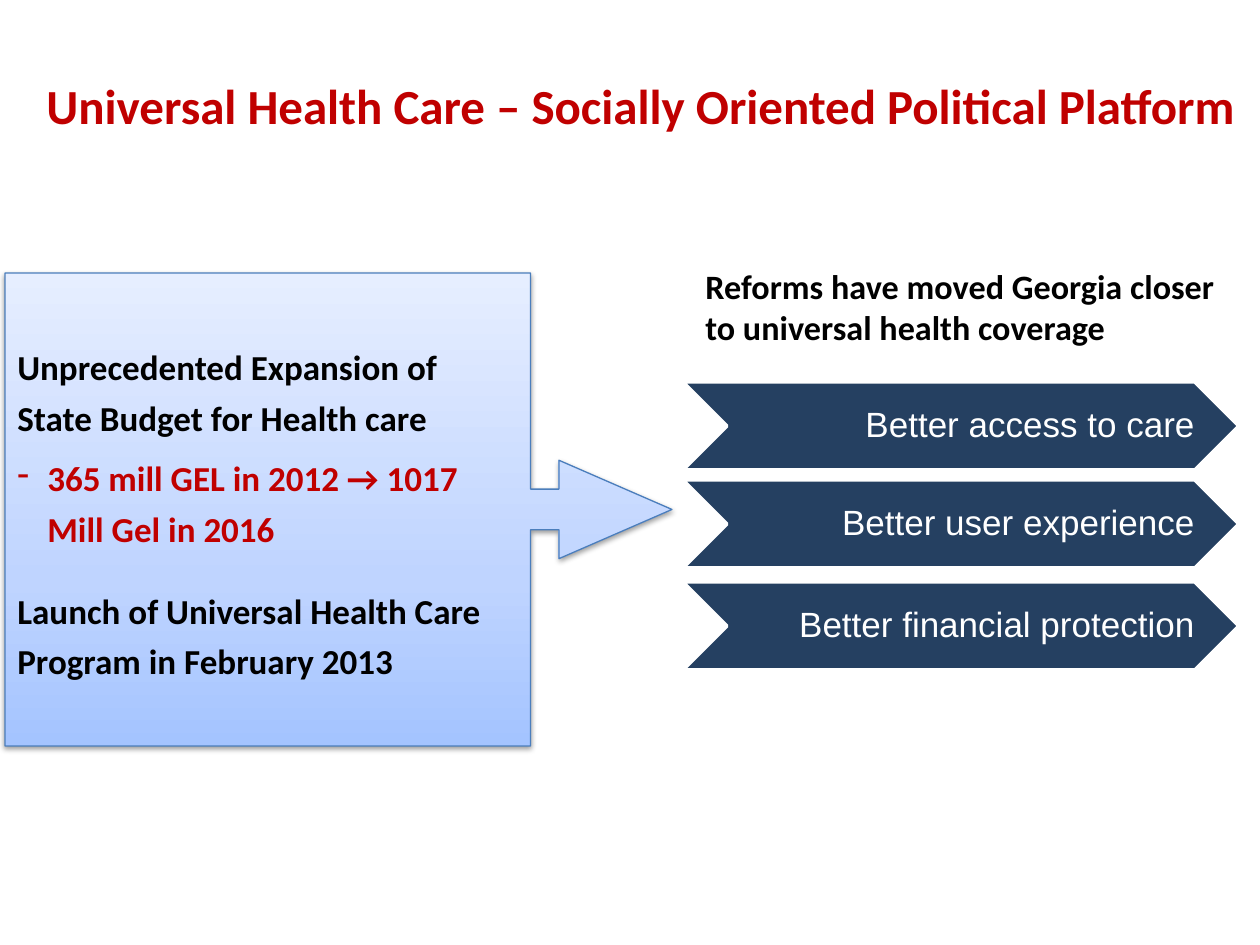
from lxml.etree import SubElement
from pptx import Presentation
from pptx.dml.color import RGBColor
from pptx.enum.shapes import MSO_SHAPE as Shape
from pptx.enum.text import MSO_ANCHOR as Anchor, PP_ALIGN as Align
from pptx.oxml.ns import qn
from pptx.util import Pt

PX = 914400 / 126
BLACK, WHITE, RED, NAVY = "000000", "FFFFFF", "C00000", "254061"


def px(length):
    return round(length * PX)


def color(hex_code):
    return RGBColor.from_string(hex_code)


def add_xml(parent, tag, **attributes):
    return SubElement(parent, qn(tag), {k: str(v) for k, v in attributes.items()})


def prepare_frame(frame, insets=None):
    frame.word_wrap = True
    frame.vertical_anchor = Anchor.MIDDLE
    if insets:
        (frame.margin_left, frame.margin_top,
         frame.margin_right, frame.margin_bottom) = map(px, insets)
    return frame


def write(paragraph, text, size=20, font="Calibri", fill=BLACK, bold=True,
          align=Align.LEFT, spacing=1.0, before=0, bullet=None, indent=0):
    if bullet:
        properties = paragraph._p.get_or_add_pPr()
        properties.set("marL", str(px(indent)))
        properties.set("indent", str(-px(indent)))
        add_xml(properties, "a:buFontTx")
        add_xml(properties, "a:buChar", char=bullet)
    paragraph.alignment = align
    paragraph.line_spacing = spacing
    if before:
        paragraph.space_before = Pt(before)
    run = paragraph.add_run()
    run.text = text
    run.font.size, run.font.name, run.font.bold = Pt(size), font, bold
    run.font.color.rgb = color(fill)


def add_shape(slide, kind, box, line, line_width):
    shape = slide.shapes.add_shape(kind, *map(px, box))
    shape.shadow.inherit = False
    shape.line.color.rgb = color(line)
    shape.line.width = Pt(line_width)
    return shape


def add_text(slide, box, text, **style):
    frame = prepare_frame(slide.shapes.add_textbox(*map(px, box)).text_frame)
    write(frame.paragraphs[0], text, **style)


def add_budget_callout(slide, box):
    callout = add_shape(slide, Shape.RIGHT_ARROW_CALLOUT, box, "4B7EBC", 0.75)
    for index, value in enumerate((0.086, 0.104, 0.239, 0.788)):
        callout.adjustments[index] = value

    # Three-stop gradient, darkest at the bottom
    callout.fill.gradient()
    callout.fill.gradient_angle = 90
    stops = callout._element.spPr.find(f".//{qn('a:gsLst')}")
    for stop in list(stops):
        stops.remove(stop)
    for percent, shade in ((0, "A4C4FF"), (35, "BFD4FF"), (100, "E6EEFF")):
        stop = add_xml(stops, "a:gs", pos=percent * 1000)
        add_xml(stop, "a:srgbClr", val=shade)

    # Soft shadow below
    effects = callout._element.spPr.find(qn("a:effectLst"))
    shadow = add_xml(effects, "a:outerShdw", blurRad=Pt(3.1), dist=Pt(1.6),
                     dir=90 * 60000, rotWithShape=0)
    add_xml(add_xml(shadow, "a:srgbClr", val=BLACK), "a:alpha", val=38000)

    # Budget and programme statements
    frame = prepare_frame(callout.text_frame)
    write(frame.paragraphs[0], "Unprecedented Expansion of State Budget for Health care",
          spacing=1.2)
    write(frame.add_paragraph(), "365 mill GEL in 2012 → 1017 Mill Gel in 2016",
          fill=RED, spacing=1.2, before=6, bullet="-", indent=30)
    write(frame.add_paragraph(), "Launch of Universal Health Care Program in February 2013",
          spacing=1.2, before=18)


def add_outcomes(slide, box, outcomes):
    left, top, width, height = box
    for offset, outcome in outcomes:
        chevron = add_shape(slide, Shape.CHEVRON, (left, top + offset, width, height), WHITE, 2)
        chevron.fill.solid()
        chevron.fill.fore_color.rgb = color(NAVY)
        frame = prepare_frame(chevron.text_frame, insets=(4, 1, 0, 1))
        write(frame.paragraphs[0], outcome, font="Arial", fill=WHITE, bold=False,
              align=Align.RIGHT, spacing=0.9)


def main():
    deck = Presentation()
    deck.slide_width, deck.slide_height = px(1260), px(945)
    slide = deck.slides.add_slide(deck.slide_layouts[6])

    # Title
    add_text(slide, (21, 26, 1250, 158),
             "Universal Health Care – Socially Oriented Political Platform ",
             size=28, fill=RED, align=Align.CENTER)

    # Outcomes on the right
    add_outcomes(slide, (683, 382, 556, 88), (
        (0, "Better access to care"),
        (98, "Better user experience"),
        (200, "Better financial protection"),
    ))
    add_text(slide, (693, 243, 546, 126),
             "Reforms have moved Georgia closer to universal health coverage", size=19.5)

    # Causes on the left
    add_budget_callout(slide, (5, 273, 667, 473))

    deck.save("out.pptx")


if __name__ == "__main__":
    main()
